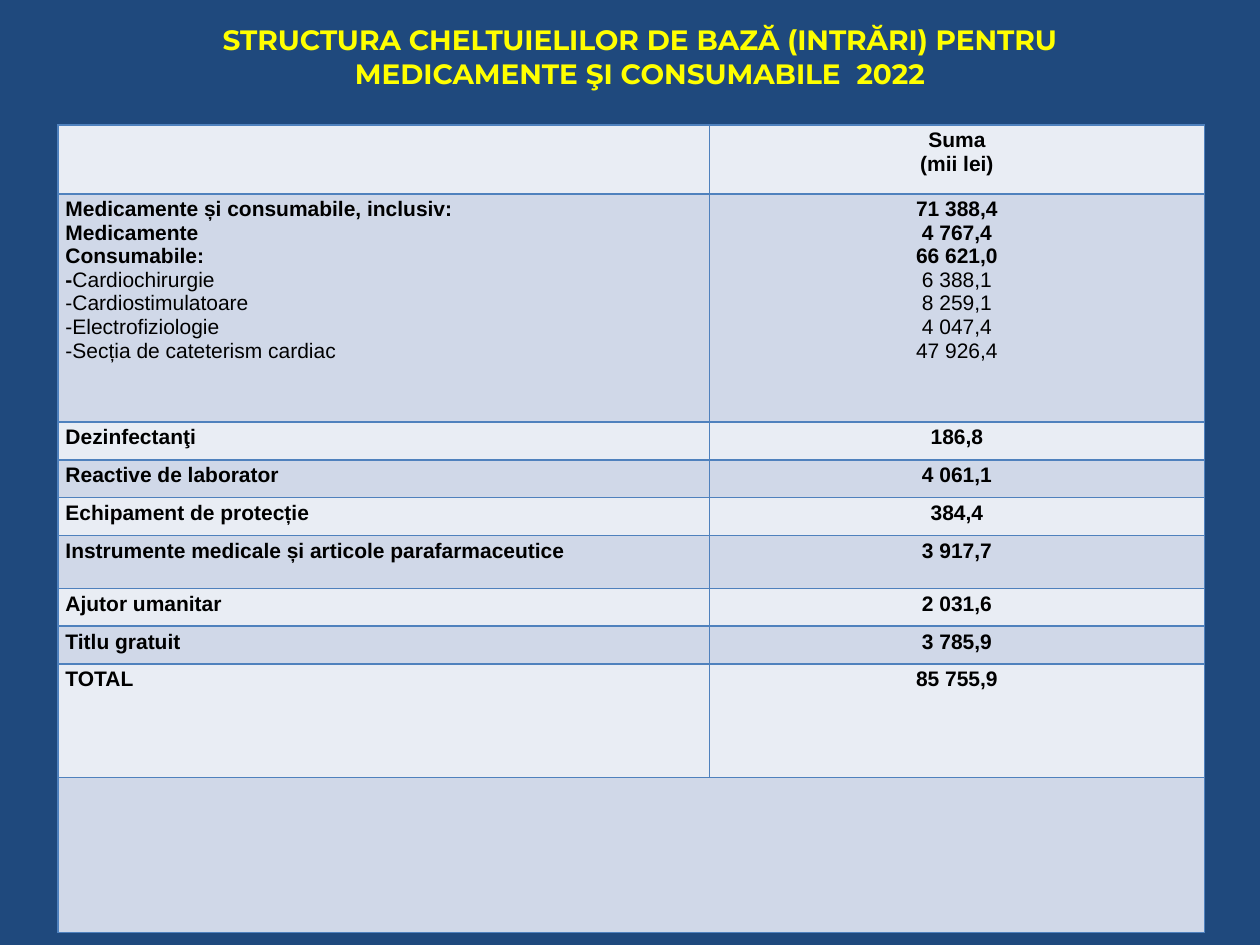
from lxml import etree
from pptx import Presentation
from pptx import util as u
from pptx.dml.color import RGBColor
from pptx.enum import text
from pptx.oxml import ns

NAVY = RGBColor(0x1F, 0x49, 0x7D)
YELLOW = RGBColor(0xFF, 0xFF, 0x00)
BLACK = RGBColor(0x00, 0x00, 0x00)
BORDER = RGBColor(0x4F, 0x81, 0xBD)
BANDS = (RGBColor(0xE9, 0xED, 0xF4), RGBColor(0xD0, 0xD8, 0xE8))

HEADING = "STRUCTURA CHELTUIELILOR DE BAZĂ (INTRĂRI) PENTRU MEDICAMENTE ŞI CONSUMABILE  2022"
COLUMN_WIDTHS = (5.17, 3.93)

# Each expense line is (bold part, regular part, amount)
SUPPLIES = [
    ("Medicamente și consumabile, inclusiv:", "", "71 388,4"),
    ("Medicamente", "", "4 767,4"),
    ("Consumabile:", "", "66 621,0"),
    ("-", "Cardiochirurgie", "6 388,1"),
    ("", "-Cardiostimulatoare", "8 259,1"),
    ("", "-Electrofiziologie", "4 047,4"),
    ("", "-Secția de cateterism cardiac", "47 926,4"),
]
EXPENSES = [
    (0.55, [("", "", "Suma"), ("", "", "(mii lei)")]),
    (1.81, SUPPLIES),
    (0.3, [("Dezinfectanţi", "", "186,8")]),
    (0.3, [("Reactive de laborator", "", "4 061,1")]),
    (0.3, [("Echipament de protecție", "", "384,4")]),
    (0.42, [("Instrumente medicale și articole parafarmaceutice", "", "3 917,7")]),
    (0.3, [("Ajutor umanitar", "", "2 031,6")]),
    (0.3, [("Titlu gratuit", "", "3 785,9")]),
    (0.9, [("TOTAL", "", "85 755,9")]),
    (1.23, []),
]


class ExpenseSlide:
    """Holds the style and the slide that shows the expense structure."""

    def __init__(self, deck):
        self.body_font, self.body_size = "Arial", u.Pt(12)
        self.title_font, self.title_size = "Montserrat", u.Pt(16)
        self.slide = deck.slides.add_slide(deck.slide_layouts[6])
        self.slide.background.fill.solid()
        self.slide.background.fill.fore_color.rgb = NAVY

    def style(self, paragraph, name, size, color, align):
        paragraph.alignment = align
        paragraph.font.name, paragraph.font.size = name, size
        paragraph.font.color.rgb = color

    def title(self, wording, left, top, width, height):
        frame = self.slide.shapes.add_textbox(
            u.Inches(left), u.Inches(top), u.Inches(width), u.Inches(height)).text_frame
        frame.word_wrap = True
        heading = frame.paragraphs[0]
        heading.text = wording
        heading.font.bold = True
        self.style(heading, self.title_font, self.title_size, YELLOW, text.PP_ALIGN.CENTER)

    def cell(self, cell, fill, lines, align):
        properties = cell._tc.get_or_add_tcPr()
        for side in ("lnL", "lnR", "lnT", "lnB"):
            edge = etree.SubElement(properties, ns.qn(f"a:{side}"), w=str(u.Pt(1)))
            paint = etree.SubElement(edge, ns.qn("a:solidFill"))
            etree.SubElement(paint, ns.qn("a:srgbClr"), val=str(BORDER))
        cell.fill.solid()
        cell.fill.fore_color.rgb = fill
        cell.margin_left = cell.margin_right = u.Inches(0.06)
        cell.margin_top = cell.margin_bottom = u.Inches(0.03)
        for index, parts in enumerate(lines):
            frame = cell.text_frame
            paragraph = frame.add_paragraph() if index else frame.paragraphs[0]
            self.style(paragraph, self.body_font, self.body_size, BLACK, align)
            for wording, bold in parts:
                if wording:
                    run = paragraph.add_run()
                    run.text = wording
                    run.font.bold = bold

    def table(self, expenses, left, top):
        heights = [height for height, _ in expenses]
        table = self.slide.shapes.add_table(
            len(expenses), len(COLUMN_WIDTHS), u.Inches(left), u.Inches(top),
            u.Inches(sum(COLUMN_WIDTHS)), u.Inches(sum(heights))).table
        for column, width in zip(table.columns, COLUMN_WIDTHS):
            column.width = u.Inches(width)
        for index, (height, entries) in enumerate(expenses):
            table.rows[index].height = u.Inches(height)
            fill = BANDS[index % 2]
            labels = [[(bold, True), (regular, False)]
                      for bold, regular, _ in entries if bold or regular]
            amounts = [[(amount, bool(bold and not regular) or index == 0)]
                       for bold, regular, amount in entries]
            self.cell(table.cell(index, 0), fill, labels, text.PP_ALIGN.LEFT)
            self.cell(table.cell(index, 1), fill, amounts, text.PP_ALIGN.CENTER)
        last = len(expenses) - 1
        table.cell(last, 0).merge(table.cell(last, 1))


def main():
    deck = Presentation()
    deck.slide_width, deck.slide_height = u.Inches(10), u.Inches(7.5)
    page = ExpenseSlide(deck)
    page.title(HEADING, 1.38, 0.13, 7.4, 0.79)
    page.table(EXPENSES, 0.46, 0.99)
    deck.save("out.pptx")


if __name__ == "__main__":
    main()
